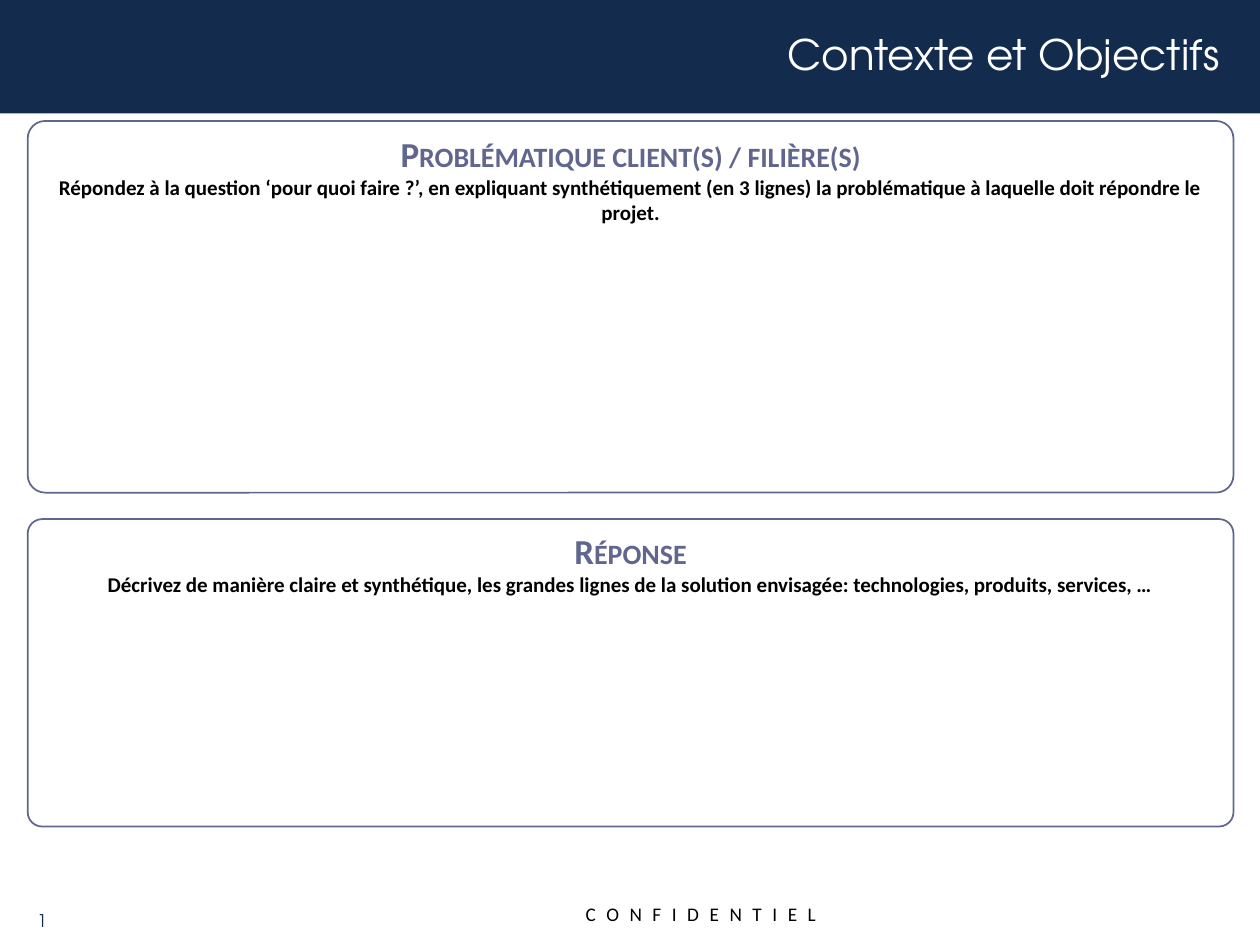
from pptx import Presentation
from pptx.dml.color import RGBColor
from pptx.enum.shapes import MSO_SHAPE as Shape
from pptx.enum.text import MSO_ANCHOR as Anchor, PP_ALIGN as Align
from pptx.util import Inches, Pt

NAVY, SLATE, BLACK, WHITE = "132C4D", "60668D", "000000", "FFFFFF"
HEAD, BODY = "TeX Gyre Adventor", "Calibri"
TITLE = "Contexte et Objectifs"
FOOTER = "CONFIDENTIEL"
PAGE = "1"
LEFT, WIDTH = 0.22, 9.57
PANELS = [
    (0.96, 2.95, "Problématique client(s) / filière(s)",
     "Répondez à la question ‘pour quoi faire ?’, en expliquant synthétiquement "
     "(en 3 lignes) la problématique à laquelle doit répondre le projet."),
    (4.12, 2.44, "Réponse",
     "Décrivez de manière claire et synthétique, les grandes lignes de la "
     "solution envisagée: technologies, produits, services, …"),
]


def color(code):
    return RGBColor.from_string(code)


def box(*sides):
    return [Inches(side) for side in sides]


def write(para, text, size, face, code, align=Align.LEFT, bold=False):
    para.alignment = align
    run = para.add_run()
    run.text = text
    font = run.font
    font.size, font.name, font.bold = Pt(size), face, bold
    font.color.rgb = color(code)
    return run


def add_panel(slide, top, height, head, hint):
    panel = slide.shapes.add_shape(
        Shape.ROUNDED_RECTANGLE, *box(LEFT, top, WIDTH, height))
    panel.adjustments[0] = 0.047
    panel.shadow.inherit = False
    panel.fill.background()
    panel.line.color.rgb = color(SLATE)
    panel.line.width = Pt(1)
    frame = panel.text_frame
    frame.word_wrap = True
    frame.vertical_anchor = Anchor.TOP
    run = write(frame.paragraphs[0], head, 20, BODY, SLATE, Align.CENTER, True)
    run.font._element.set("cap", "small")
    write(frame.add_paragraph(), hint, 12, BODY, BLACK, Align.CENTER, True)


def main():
    deck = Presentation()
    deck.slide_width, deck.slide_height = box(10, 7.5)
    slide = deck.slides.add_slide(deck.slide_layouts[5])
    shapes = slide.shapes

    band = shapes.add_shape(Shape.RECTANGLE, *box(0, 0, 10, 0.9))
    band.shadow.inherit = False
    band.fill.solid()
    band.fill.fore_color.rgb = color(NAVY)
    band.line.fill.background()

    title = shapes.title
    title.left, title.top, title.width, title.height = box(0.15, 0.14, 9.63, 0.58)
    title.text_frame.vertical_anchor = Anchor.MIDDLE
    write(title.text_frame.paragraphs[0], TITLE, 24, HEAD, WHITE, Align.RIGHT)
    title._element.addprevious(band._element)

    footer = shapes.add_textbox(*box(4.55, 7.11, 2.13, 0.29)).text_frame
    footer.word_wrap = False
    run = write(footer.paragraphs[0], FOOTER, 11, BODY, BLACK)
    run.font._element.set("spc", "600")

    number = shapes.add_textbox(*box(-0.04, 7.11, 0.51, 0.4)).text_frame
    number.word_wrap = True
    number.vertical_anchor = Anchor.MIDDLE
    write(number.paragraphs[0], PAGE, 10, HEAD, NAVY, Align.RIGHT)

    for panel in PANELS:
        add_panel(slide, *panel)
    deck.save("out.pptx")


if __name__ == "__main__":
    main()
